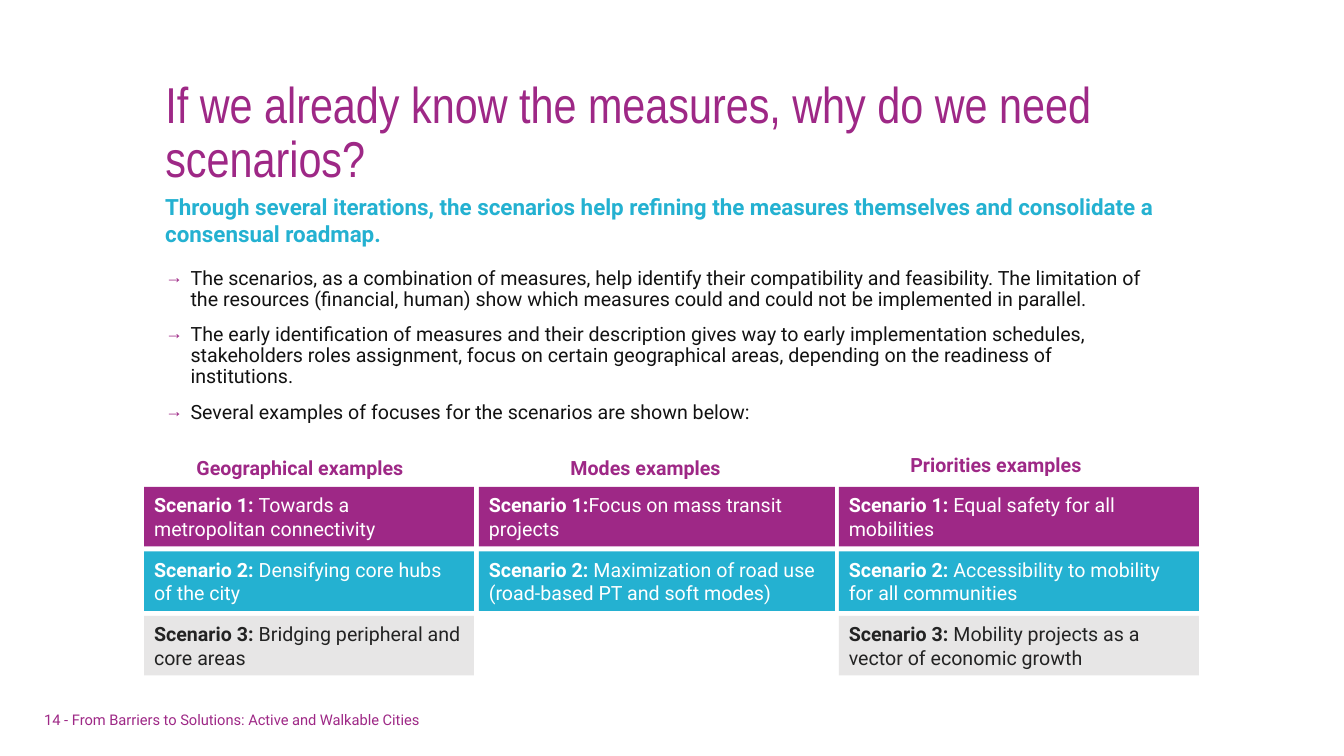
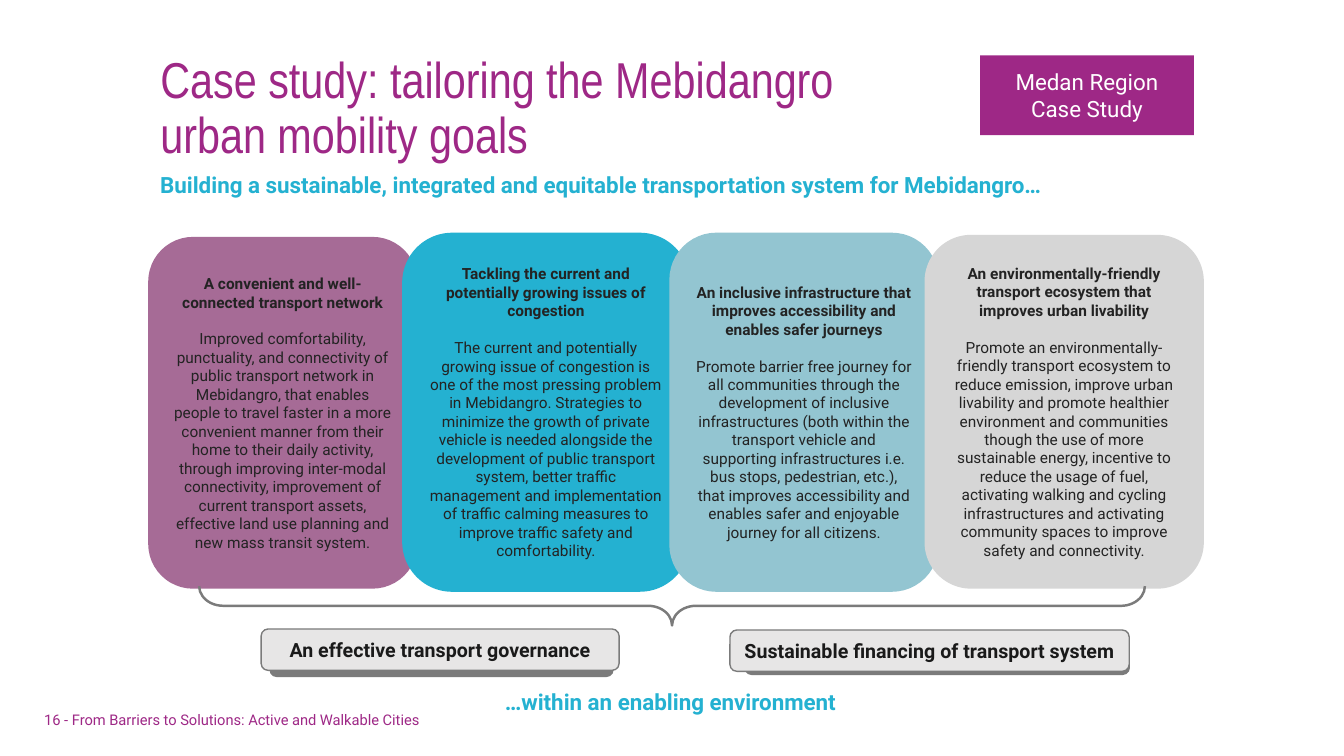
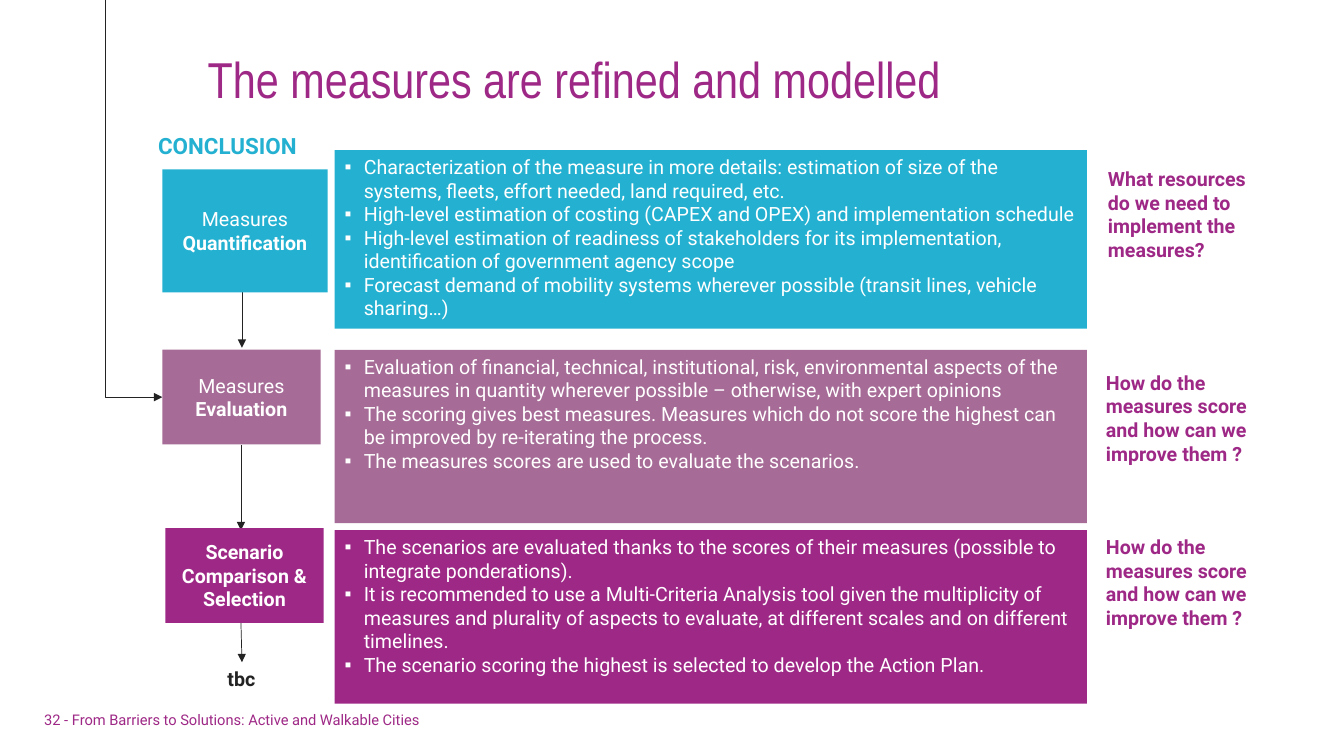
from dataclasses import dataclass
from pptx import Presentation
from pptx.dml.color import RGBColor
from pptx.enum.shapes import MSO_CONNECTOR, MSO_SHAPE
from pptx.enum.text import MSO_ANCHOR, MSO_AUTO_SIZE, PP_ALIGN
from pptx.oxml.ns import qn
from pptx.util import Pt
from lxml.etree import SubElement


@dataclass(frozen=True)
class Theme:
    plum: str = "9E2886"
    mauve: str = "A66B96"
    cyan: str = "24B1D1"
    mist: str = "93C5D1"
    pale: str = "E7E6E6"
    silver: str = "D6D6D6"
    gray: str = "7B7B7B"
    dark: str = "232323"
    ink: str = "121212"
    coal: str = "1A1A1A"
    white: str = "FFFFFF"
    head: str = "Arial Narrow"
    font: str = "Roboto"
    title: int = 36
    lead: int = 16
    text: int = 14
    card: int = 11
    foot: float = 10.5


T = Theme()
SCALE = 9144
RECT, ROUND = MSO_SHAPE.RECTANGLE, MSO_SHAPE.ROUNDED_RECTANGLE
LEFT, CENTER = PP_ALIGN.LEFT, PP_ALIGN.CENTER
TOP, MIDDLE = MSO_ANCHOR.TOP, MSO_ANCHOR.MIDDLE


def px(*sizes):
    return [size * SCALE for size in sizes]


def rgb(color):
    return RGBColor.from_string(color)


def mark(para, sign, indent, color=None, scale=None):
    props = para._p.get_or_add_pPr()
    props.set("marL", str(indent * SCALE))
    props.set("indent", str(-indent * SCALE))
    if color:
        SubElement(SubElement(props, qn("a:buClr")), qn("a:srgbClr")).set("val", color)
    if scale:
        SubElement(props, qn("a:buSzPct")).set("val", str(scale * 1000))
    SubElement(props, qn("a:buFont")).set("typeface", "Arial")
    SubElement(props, qn("a:buChar")).set("char", sign)


def write(shape, *lines, size=T.text, color=T.dark, bold=False, font=T.font,
          align=LEFT, anchor=TOP, wrap=True, lead=None, gap=0, bullet=None):
    frame = shape.text_frame
    frame.word_wrap = wrap
    frame.auto_size = MSO_AUTO_SIZE.NONE
    frame.vertical_anchor = anchor
    for index, line in enumerate(lines):
        para = frame.add_paragraph() if index else frame.paragraphs[0]
        if bullet:
            mark(para, **bullet)
        para.alignment = align
        para.line_spacing = lead
        para.space_before = Pt(gap if index else 0)
        parts = [(line, bold)] if isinstance(line, str) else [
            (part, not spot) for spot, part in enumerate(line)]
        for part, heavy in parts:
            run = para.add_run()
            run.text = part
            run.font.name = font
            run.font.size = Pt(size)
            run.font.bold = heavy
            run.font.color.rgb = rgb(color)


def label(slide, box, text, **form):
    write(slide.shapes.add_textbox(*px(*box)), text, **form)


def block(slide, box, fill=None, line=None, width=1, kind=RECT):
    shape = slide.shapes.add_shape(kind, *px(*box))
    shape.shadow.inherit = False
    if fill:
        shape.fill.solid()
        shape.fill.fore_color.rgb = rgb(fill)
    else:
        shape.fill.background()
    if line:
        shape.line.color.rgb = rgb(line)
        shape.line.width = Pt(width)
    else:
        shape.line.fill.background()
    return shape


def arrow(slide, start, end, kind=MSO_CONNECTOR.STRAIGHT):
    link = slide.shapes.add_connector(kind, *px(*start, *end))
    link.line.color.rgb = rgb(T.dark)
    link.line.width = Pt(0.5)
    SubElement(link.line._get_or_add_ln(), qn("a:tailEnd")).set("type", "triangle")
    SubElement(link._element.spPr, qn("a:effectLst"))
    return link


def bend(slide, x, y, right, down):
    mid_x, mid_y = x + right // 2, y + down // 2
    link = arrow(slide, (mid_x + down // 2, mid_y - right // 2),
                 (mid_x - down // 2, mid_y + right // 2), MSO_CONNECTOR.ELBOW)
    props = link._element.spPr
    props.find(qn("a:xfrm")).set("rot", "16200000")
    props.find(qn("a:prstGeom")).set("prst", "bentConnector2")


def place(holder, box):
    holder.left, holder.top, holder.width, holder.height = px(*box)
    return holder


def page(deck, number, title, box, layout=5):
    slide = deck.slides.add_slide(deck.slide_layouts[layout])
    write(place(slide.shapes.title, box), title, size=T.title, font=T.head,
          color=T.plum, lead=0.9)
    label(slide, (34, 700, 405, 28),
          f"{number} - From Barriers to Solutions: Active and Walkable Cities",
          size=T.foot, color=T.plum, wrap=False)
    return slide


def column(slide, x, y, width, head, items):
    text, left, top, span = head
    label(slide, (x + left, y + top, span, 34), text, color=T.plum, bold=True, wrap=False)
    tones = [(T.plum, T.white), (T.cyan, T.white), (T.pale, T.dark)]
    for row, (item, (fill, color)) in enumerate(zip(items, tones)):
        bar = block(slide, (x, y + row * 64, width, 59), fill)
        write(bar, item, color=color, anchor=MIDDLE)


def card(slide, box, fill, head, text, line=None):
    shape = block(slide, box, fill, line, 4.5, ROUND)
    write(shape, (head,), text, size=T.card, align=CENTER, anchor=MIDDLE, gap=13)


def plate(slide, x, y, width, shift, drop, text):
    block(slide, (x + shift, y + drop, width - 15, 39), T.gray, T.gray, kind=ROUND)
    face = block(slide, (x, y, width, 41), T.pale, T.gray, kind=ROUND)
    write(face, text, color=T.coal, bold=True, align=CENTER, anchor=MIDDLE)


def stage(slide, y, height, fill, name, step, points, ask, note):
    panel = block(slide, (332, y, 746, height), fill)
    write(panel, *points, color=T.white, bullet=dict(sign="▪", indent=19))
    x, top, width, tall = step
    write(block(slide, (x, y + top, width, tall), fill), *name,
          color=T.white, align=CENTER, anchor=MIDDLE)
    left, drop, span = note
    label(slide, (left, y + drop, span, 104), ask, color=T.plum, bold=True)


def needs(deck):
    slide = page(deck, 14, "If we already know the measures, why do we need scenarios?",
                 (154, 74, 997, 63), 1)
    label(slide, (154, 187, 1040, 64),
          "Through several iterations, the scenarios help refining the measures "
          "themselves and consolidate a consensual roadmap.",
          size=T.lead, color=T.cyan, bold=True)
    write(place(slide.placeholders[1], (154, 261, 1006, 242)),
          "The scenarios, as a combination of measures, help identify their compatibility "
          "and feasibility. The limitation of the resources (financial, human) show which "
          "measures could and could not be implemented in parallel.",
          "The early identification of measures and their description gives way to early "
          "implementation schedules, stakeholders roles assignment, focus on certain "
          "geographical areas, depending on the readiness of institutions.",
          "Several examples of focuses for the scenarios are shown below:",
          color=T.ink, lead=0.9, gap=10,
          bullet=dict(sign="→", indent=25, color=T.plum, scale=90))
    column(slide, 143, 483, 327, ("Geographical examples", 42, -36, 227), [
        ("Scenario 1: ", "Towards a metropolitan connectivity"),
        ("Scenario 2: ", "Densifying core hubs of the city"),
        ("Scenario 3: ", "Bridging peripheral and core areas")])
    column(slide, 475, 483, 353, ("Modes examples", 81, -36, 170), [
        ("Scenario 1:", "Focus on mass transit projects"),
        ("Scenario 2: ", "Maximization of road use (road-based PT and soft modes)")])
    column(slide, 832, 483, 357, ("Priorities examples", 61, -39, 191), [
        ("Scenario 1: ", "Equal safety for all mobilities"),
        ("Scenario 2: ", "Accessibility to mobility for all communities"),
        ("Scenario 3: ", "Mobility projects as a vector of economic growth")])


def goals(deck):
    slide = page(deck, 16, "Case study: tailoring the Mebidangro urban mobility goals",
                 (149, 50, 778, 63))
    label(slide, (149, 165, 1031, 64),
          "Building a sustainable, integrated and equitable transportation system "
          "for Mebidangro…", size=T.lead, color=T.cyan, bold=True)
    card(slide, (147, 235, 267, 349), T.mauve,
         "A convenient and well-connected transport network",
         "Improved comfortability, punctuality, and connectivity of public transport "
         "network in Mebidangro, that enables people to travel faster in a more convenient "
         "manner from their home to their daily activity, through improving inter-modal "
         "connectivity, improvement of current transport assets, effective land use "
         "planning and new mass transit system.")
    card(slide, (402, 234, 279, 350), T.cyan,
         "Tackling the current and potentially growing issues of congestion",
         "The current and potentially growing issue of congestion is one of the most "
         "pressing problem in Mebidangro. Strategies to minimize the growth of private "
         "vehicle is needed alongside the development of public transport system, better "
         "traffic management and implementation of traffic calming measures to improve "
         "traffic safety and comfortability.", T.cyan)
    card(slide, (667, 234, 261, 350), T.mist,
         "An inclusive infrastructure that improves accessibility and enables safer journeys",
         "Promote barrier free journey for all communities through the development of "
         "inclusive infrastructures (both within the transport vehicle and supporting "
         "infrastructures i.e. bus stops, pedestrian, etc.), that improves accessibility "
         "and enables safer and enjoyable journey for all citizens.", T.mist)
    card(slide, (917, 233, 277, 351), T.silver,
         "An environmentally-friendly transport ecosystem that improves urban livability",
         "Promote an environmentally-friendly transport ecosystem to reduce emission, "
         "improve urban livability and promote healthier environment and communities "
         "though the use of more sustainable energy, incentive to reduce the usage of "
         "fuel, activating walking and cycling infrastructures and activating community "
         "spaces to improve safety and connectivity.")
    brace = block(slide, (647, 132, 39, 938), line=T.gray, width=1.75,
                  kind=MSO_SHAPE.RIGHT_BRACE)
    brace.rotation = 90
    brace.adjustments[0], brace.adjustments[1] = 0.61, 0.5
    label(slide, (358, 678, 614, 37), "…within an enabling environment",
          size=T.lead, color=T.cyan, bold=True, align=CENTER)
    plate(slide, 724, 625, 396, 15, 5, "Sustainable financing of transport system")
    plate(slide, 259, 624, 355, 9, 8, "An effective transport governance")
    write(block(slide, (972, 55, 212, 79), T.plum), "Medan Region Case Study",
          size=T.lead, color=T.white, align=CENTER, anchor=MIDDLE)


def steps(deck):
    slide = page(deck, 32, "The measures are refined and modelled", (196, 50, 943, 63))
    label(slide, (147, 126, 159, 37), "CONCLUSION", size=T.lead, color=T.cyan,
          bold=True, wrap=False)
    for start, end in [((240, 290), (240, 345)), ((239, 441), (239, 526)),
                       ((239, 618), (240, 657))]:
        arrow(slide, start, end)
    bend(slide, 105, 0, 56, 394)
    score = "How do the measures score and how can we improve them ?"
    stage(slide, 149, 177, T.cyan, ["Measures", ("Quantification",)], (161, 19, 164, 122), [
        "Characterization of the measure in more details: estimation of size of the "
        "systems, fleets, effort needed, land required, etc.",
        "High-level estimation of costing (CAPEX and OPEX) and implementation schedule",
        "High-level estimation of readiness of stakeholders for its implementation, "
        "identification of government agency scope",
        "Forecast demand of mobility systems wherever possible (transit lines, vehicle "
        "sharing…)"],
        "What resources do we need to implement the measures?", (1089, 12, 167))
    stage(slide, 347, 172, T.mauve, ["Measures", ("Evaluation",)], (161, 0, 157, 94), [
        "Evaluation of financial, technical, institutional, risk, environmental aspects of "
        "the measures in quantity wherever possible – otherwise, with expert opinions",
        "The scoring gives best measures. Measures which do not score the highest can be "
        "improved by re-iterating the process.",
        "The measures scores are used to evaluate the scenarios."],
        score, (1087, 16, 167))
    stage(slide, 526, 172, T.plum, [("Scenario Comparison & Selection",)],
          (164, -2, 157, 94), [
        "The scenarios are evaluated thanks to the scores of their measures (possible to "
        "integrate ponderations).",
        "It is recommended to use a Multi-Criteria Analysis tool given the multiplicity of "
        "measures and plurality of aspects to evaluate, at different scales and on "
        "different timelines.",
        "The scenario scoring the highest is selected to develop the Action Plan."],
        score, (1087, 0, 185))
    label(slide, (187, 657, 105, 34), "tbc", bold=True, align=CENTER)


def main():
    deck = Presentation()
    deck.slide_width, deck.slide_height = px(1333, 750)
    for build in (needs, goals, steps):
        build(deck)
    deck.save("out.pptx")


if __name__ == "__main__":
    main()
